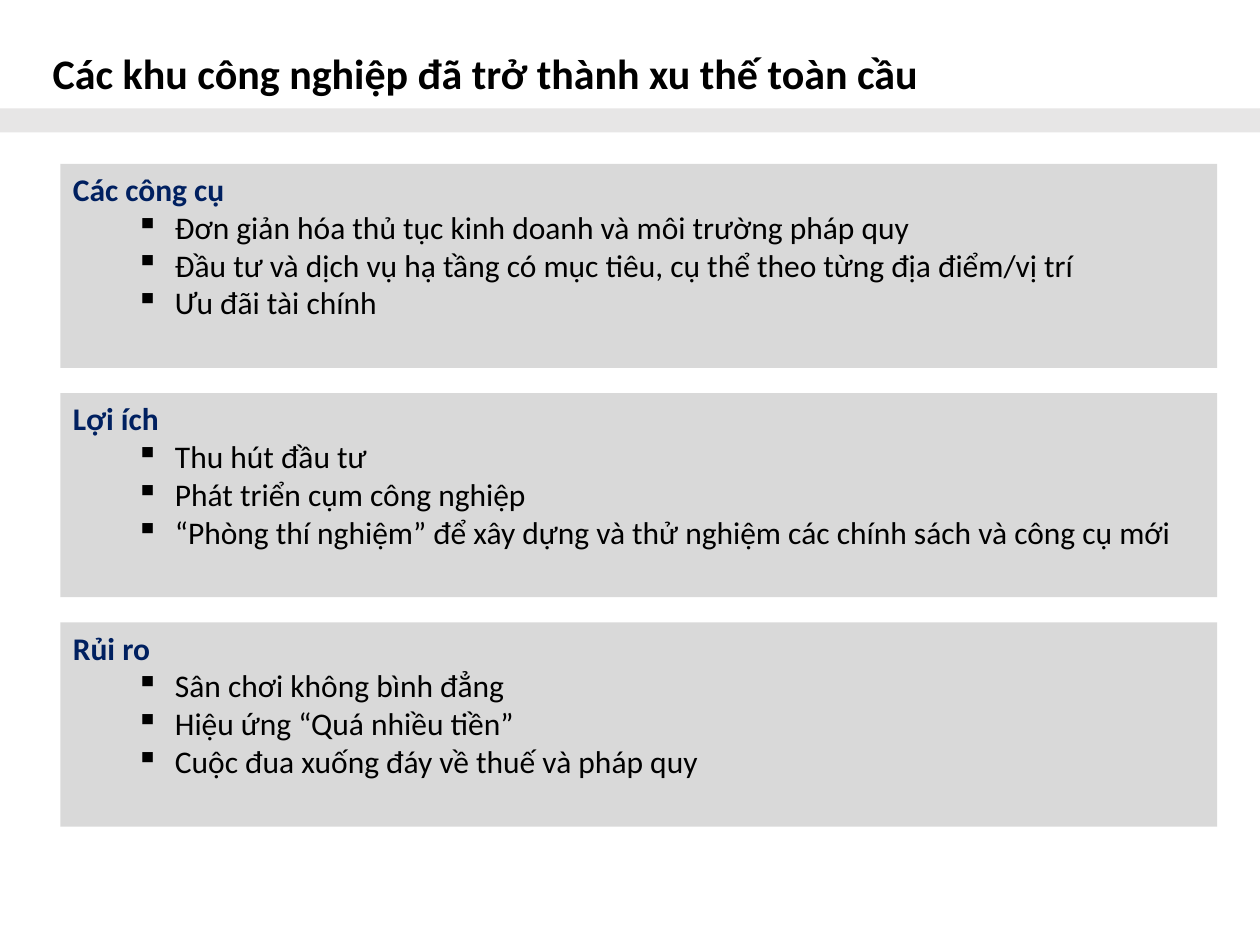
from lxml import etree
from pptx import Presentation
from pptx import util as u
from pptx.dml.color import RGBColor
from pptx.enum import shapes, text
from pptx.oxml.ns import qn


def color(value):
    return RGBColor.from_string(value)


def add_text(p, content, size=18, hue="000000", bold=False, font="Calibri"):
    r = p.add_run()
    r.text = content
    r.font.name = font
    r.font.size = u.Pt(size)
    r.font.bold = bold
    r.font.color.rgb = color(hue)


class Deck:
    band = "E7E6E6"
    panel_fill = "D9D9D9"
    heading = "002060"

    def __init__(self, prs):
        self.s = prs.slides.add_slide(prs.slide_layouts[6])

    def title(self, content, x, y, w, h):
        sp = self.s.shapes.add_textbox(*map(u.Inches, (x, y, w, h)))
        tf = sp.text_frame
        tf.word_wrap = True
        tf.vertical_anchor = text.MSO_ANCHOR.BOTTOM
        p = tf.paragraphs[0]
        p.line_spacing = 0.9
        add_text(p, content, size=24, bold=True)

    def rect(self, x, y, w, h, fill):
        sp = self.s.shapes.add_shape(
            shapes.MSO_SHAPE.RECTANGLE, *map(u.Inches, (x, y, w, h)))
        sp.shadow.inherit = False
        sp.fill.solid()
        sp.fill.fore_color.rgb = color(fill)
        sp.line.fill.background()
        return sp

    def bullet(self, p, char="▪"):
        p.level = 1
        pPr = p._p.get_or_add_pPr()
        pPr.set("marL", str(u.Inches(0.81)))
        pPr.set("indent", str(u.Inches(-0.31)))
        etree.SubElement(pPr, qn("a:buChar")).set("char", char)

    def panel(self, heading, items, x, y, w, h):
        tf = self.rect(x, y, w, h, self.panel_fill).text_frame
        tf.word_wrap = True
        tf.vertical_anchor = text.MSO_ANCHOR.TOP
        p = tf.paragraphs[0]
        p.alignment = text.PP_ALIGN.LEFT
        add_text(p, heading, hue=self.heading, bold=True)
        for item in items:
            p = tf.add_paragraph()
            p.alignment = text.PP_ALIGN.LEFT
            self.bullet(p)
            add_text(p, item)


PANELS = [
    ("Các công cụ", [
        "Đơn giản hóa thủ tục kinh doanh và môi trường pháp quy",
        "Đầu tư và dịch vụ hạ tầng có mục tiêu, cụ thể theo từng địa điểm/vị trí",
        "Ưu đãi tài chính",
    ]),
    ("Lợi ích", [
        "Thu hút đầu tư",
        "Phát triển cụm công nghiệp",
        "“Phòng thí nghiệm” để xây dựng và thử nghiệm các chính sách và công cụ mới",
    ]),
    ("Rủi ro", [
        "Sân chơi không bình đẳng",
        "Hiệu ứng “Quá nhiều tiền”",
        "Cuộc đua xuống đáy về thuế và pháp quy",
    ]),
]


def main():
    prs = Presentation()
    prs.slide_width = u.Inches(10)
    prs.slide_height = u.Inches(7.5)
    deck = Deck(prs)
    deck.rect(0, 0.86, 10, 0.19, deck.band)
    deck.title("Các khu công nghiệp đã trở thành xu thế toàn cầu", 0.32, 0, 9.25, 0.83)
    for i, (heading, items) in enumerate(PANELS):
        deck.panel(heading, items, 0.48, 1.3 + i * 1.82, 9.18, 1.62)
    prs.save("out.pptx")


if __name__ == "__main__":
    main()
